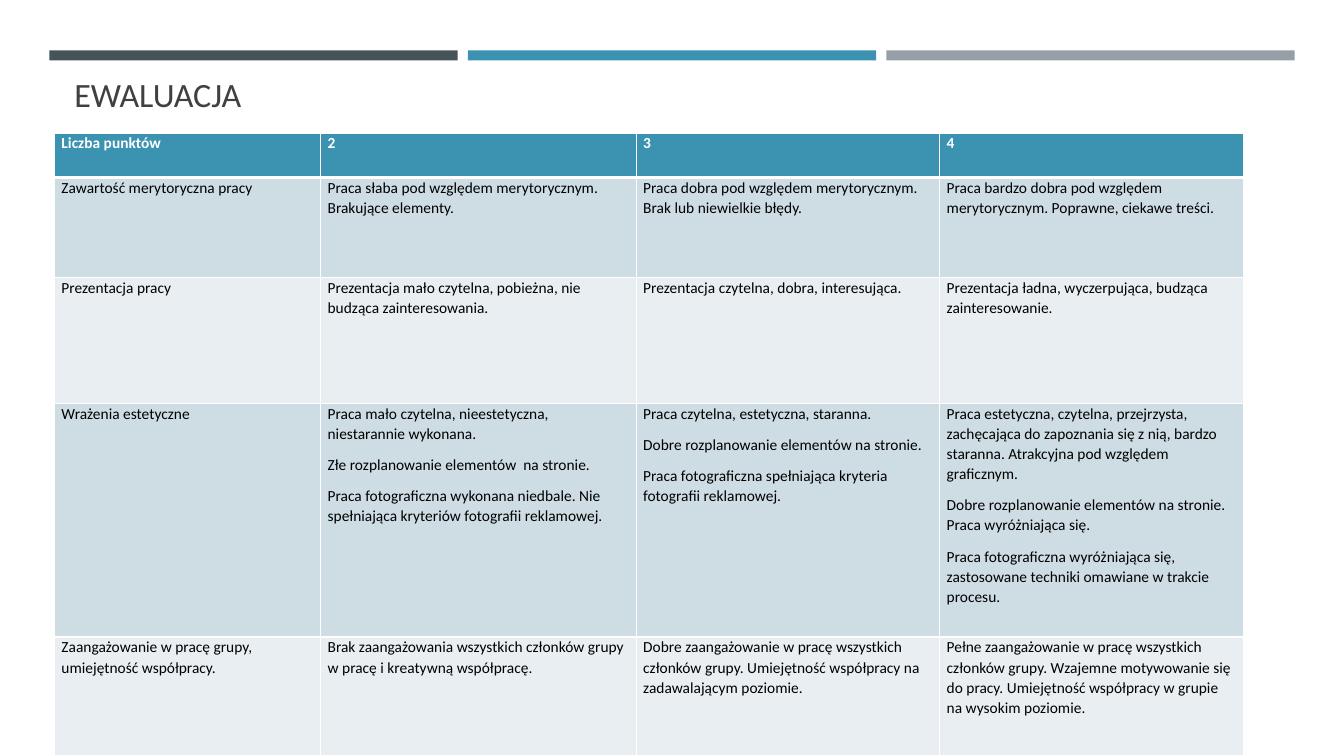
from dataclasses import dataclass

from lxml.etree import SubElement
from pptx import Presentation
from pptx.dml.color import RGBColor
from pptx.enum.shapes import MSO_SHAPE
from pptx.enum.text import MSO_ANCHOR
from pptx.oxml.ns import qn
from pptx.util import Inches, Pt


@dataclass(frozen=True)
class Theme:
    font: str = "Calibri"
    title_size: float = 24.3
    table_size: float = 11
    title: str = "404040"
    text: str = "000000"
    white: str = "FFFFFF"
    dark: str = "465359"
    accent: str = "3B92B1"
    gray: str = "969FA7"
    bands: tuple = ("CEDCE4", "E8EEF2")


theme = Theme()


def style_font(paragraph, size, color, bold=False):
    paragraph.font.name = theme.font
    paragraph.font.size = Pt(size)
    paragraph.font.bold = bold
    paragraph.font.color.rgb = RGBColor.from_string(color)


def add_borders(cell, bottom_width):
    properties = cell._tc.get_or_add_tcPr()
    widths = {"a:lnL": 1, "a:lnR": 1, "a:lnT": 1, "a:lnB": bottom_width}
    for position, (tag, width) in enumerate(widths.items()):
        line = SubElement(properties, qn(tag), w=str(Pt(width)))
        fill = SubElement(line, qn("a:solidFill"))
        SubElement(fill, qn("a:srgbClr"), val=theme.white)
        properties.insert(position, line)


presentation = Presentation()
presentation.slide_width = Inches(13.33)
presentation.slide_height = Inches(7.5)
slide = presentation.slides.add_slide(presentation.slide_layouts[6])

for index, color in enumerate((theme.dark, theme.accent, theme.gray)):
    bar = slide.shapes.add_shape(
        MSO_SHAPE.RECTANGLE, Inches(0.49 + 4.15 * index), Inches(0.5), Inches(4.05), Inches(0.1)
    )
    bar.shadow.inherit = False
    bar.fill.solid()
    bar.fill.fore_color.rgb = RGBColor.from_string(color)
    bar.line.fill.background()

title_box = slide.shapes.add_textbox(Inches(0.64), Inches(0.77), Inches(12.06), Inches(0.42))
title_frame = title_box.text_frame
title_frame.word_wrap = True
title_frame.vertical_anchor = MSO_ANCHOR.BOTTOM
title_paragraph = title_frame.paragraphs[0]
title_paragraph.text = "EWALUACJA"
title_paragraph.line_spacing = 0.9
style_font(title_paragraph, theme.title_size, theme.title)

criteria = [
    ["Liczba punktów", "2", "3", "4"],
    [
        "Zawartość merytoryczna pracy",
        "Praca słaba pod względem merytorycznym. Brakujące elementy.",
        "Praca dobra pod względem merytorycznym. Brak lub niewielkie błędy.",
        "Praca bardzo dobra pod względem merytorycznym. Poprawne, ciekawe treści.",
    ],
    [
        "Prezentacja pracy",
        "Prezentacja mało czytelna, pobieżna, nie budząca zainteresowania.",
        "Prezentacja czytelna, dobra, interesująca.",
        "Prezentacja ładna, wyczerpująca, budząca zainteresowanie.",
    ],
    [
        "Wrażenia estetyczne",
        "Praca mało czytelna, nieestetyczna, niestarannie wykonana.\n"
        "Złe rozplanowanie elementów  na stronie.\n"
        "Praca fotograficzna wykonana niedbale. Nie spełniająca kryteriów fotografii reklamowej.",
        "Praca czytelna, estetyczna, staranna.\n"
        "Dobre rozplanowanie elementów na stronie.\n"
        "Praca fotograficzna spełniająca kryteria fotografii reklamowej.",
        "Praca estetyczna, czytelna, przejrzysta, zachęcająca do zapoznania się z nią, "
        "bardzo staranna. Atrakcyjna pod względem graficznym.\n"
        "Dobre rozplanowanie elementów na stronie. Praca wyróżniająca się.\n"
        "Praca fotograficzna wyróżniająca się, zastosowane techniki omawiane w trakcie procesu.",
    ],
    [
        "Zaangażowanie w pracę grupy, umiejętność współpracy.",
        "Brak zaangażowania wszystkich członków grupy w pracę i kreatywną współpracę.",
        "Dobre zaangażowanie w pracę wszystkich członków grupy. "
        "Umiejętność współpracy na zadawalającym poziomie.",
        "Pełne zaangażowanie w pracę wszystkich członków grupy. Wzajemne motywowanie się "
        "do pracy. Umiejętność współpracy w grupie na wysokim poziomie.",
    ],
]
column_widths = (2.64, 3.13, 3.01, 3.01)
row_heights = (0.44, 0.99, 1.25, 2.32, 1.18)

table = slide.shapes.add_table(
    len(row_heights), len(column_widths), Inches(0.54), Inches(1.32),
    Inches(sum(column_widths)), Inches(sum(row_heights)),
).table
for column, width in zip(table.columns, column_widths):
    column.width = Inches(width)

for row_index, (row, height, texts) in enumerate(zip(table.rows, row_heights, criteria)):
    row.height = Inches(height)
    is_header = row_index == 0
    fill_color = theme.accent if is_header else theme.bands[(row_index - 1) % 2]
    text_color = theme.white if is_header else theme.text
    for cell, text in zip(row.cells, texts):
        cell.margin_left = cell.margin_right = Inches(0.07)
        cell.margin_top = cell.margin_bottom = Inches(0)
        cell.fill.solid()
        cell.fill.fore_color.rgb = RGBColor.from_string(fill_color)
        add_borders(cell, 3 if is_header else 1)
        cell.text = text
        for paragraph in cell.text_frame.paragraphs:
            paragraph.line_spacing = 1.06
            paragraph.space_after = Pt(8)
            style_font(paragraph, theme.table_size, text_color, is_header)

presentation.save("out.pptx")
